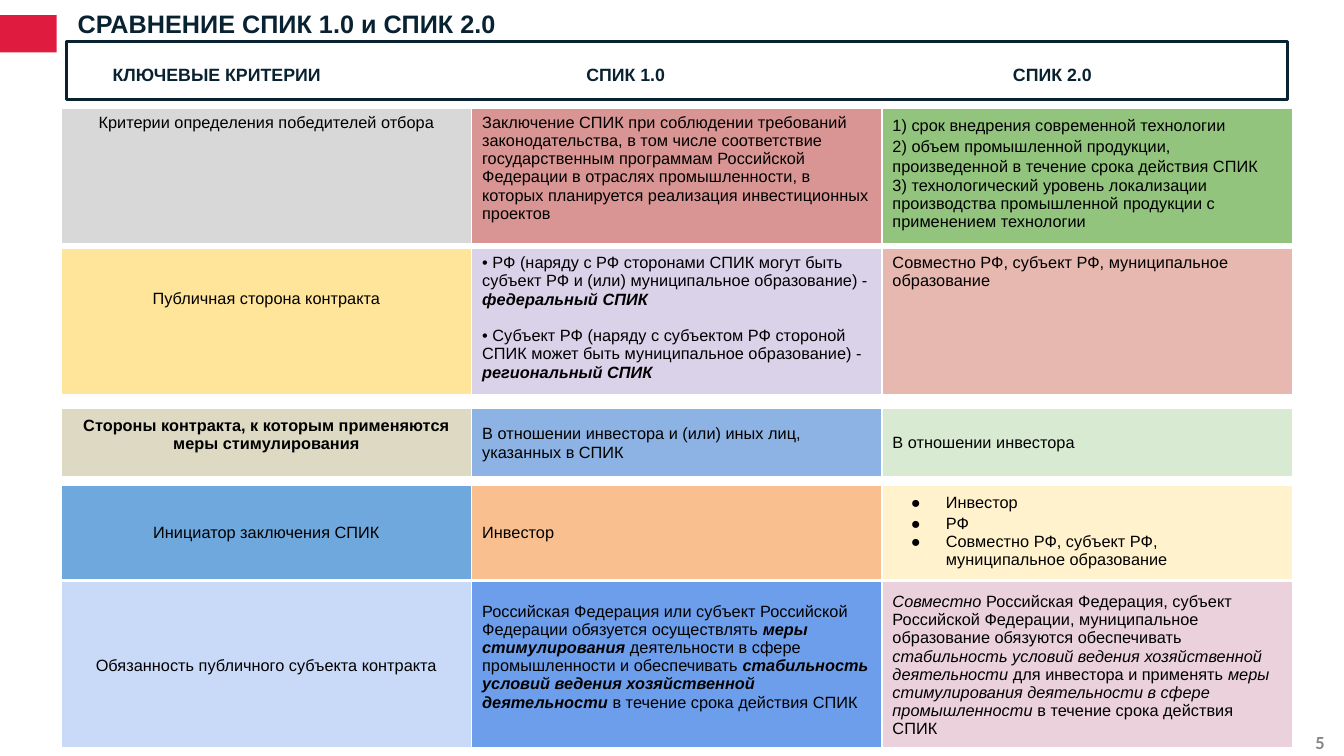
from lxml.etree import SubElement
from pptx import Presentation
from pptx.dml.color import RGBColor
from pptx.enum.shapes import MSO_SHAPE
from pptx.enum.text import MSO_ANCHOR, PP_ALIGN
from pptx.oxml.ns import qn
from pptx.util import Cm, Pt

NAVY, RED, GREY, BLACK, WHITE = "092231", "DF1C40", "888888", "000000", "FFFFFF"
TOP, MIDDLE = MSO_ANCHOR.TOP, MSO_ANCHOR.MIDDLE
TABLE_LEFT, COLUMN_WIDTH = 1.46, 9.77
TEXT_SIZE, CELL_INSET = 11, 0.13


def color(value):
    return RGBColor.from_string(value)


def para_of(*spans, **options):
    """Describe a paragraph; a span is plain text or a (text, style) pair of b and i."""
    return {"spans": spans, **options}


def cell_of(fill, *paras, anchor=TOP, top=CELL_INSET, bottom=CELL_INSET):
    return {"fill": fill, "paras": paras, "anchor": anchor, "top": top, "bottom": bottom}


def criterion(fill, text, style="", **options):
    return cell_of(fill, para_of((text, style), align=PP_ALIGN.CENTER), **options)


def item(text, spacing=None):
    return para_of(text, bullet=True, spacing=spacing)


# Each row: top, height, three cells
ROWS = [
    (2.58, 3.23, [
        criterion("D8D8D8", "Критерии определения победителей отбора"),
        cell_of("D99593", para_of(
            "Заключение СПИК при соблюдении требований законодательства, в том числе "
            "соответствие государственным программам Российской Федерации в отраслях "
            "промышленности, в которых планируется реализация инвестиционных проектов")),
        cell_of(
            "93C47D",
            para_of("1) срок внедрения современной технологии", spacing=1.15),
            para_of("2) объем промышленной продукции, произведенной в течение срока "
                    "действия СПИК", spacing=1.15),
            para_of("3) технологический уровень локализации производства промышленной "
                    "продукции с применением технологии")),
    ]),
    (5.92, 3.28, [
        criterion("FFE599", "Публичная сторона контракта", top=0.97),
        cell_of(
            "D9D2E9",
            para_of("• РФ (наряду с РФ сторонами СПИК могут быть субъект РФ и (или) "
                    "муниципальное образование) - ", ("федеральный СПИК", "bi"), after=12.5),
            para_of("• Субъект РФ (наряду с субъектом РФ стороной СПИК может быть "
                    "муниципальное образование) - ", ("региональный СПИК", "bi"))),
        cell_of("E6B8AF", para_of("Совместно РФ, субъект РФ, муниципальное образование")),
    ]),
    (9.73, 1.65, [
        criterion("DDD9C3", "Стороны контракта, к которым применяются меры стимулирования",
                  "b", anchor=MIDDLE, bottom=0.53),
        cell_of("8CB3E3", para_of("В отношении инвестора и (или) иных лиц, указанных в СПИК"),
                anchor=MIDDLE),
        cell_of("D9EAD3", para_of("В отношении инвестора"), anchor=MIDDLE),
    ]),
    (11.56, 2.1, [
        criterion("6FA8DC", "Инициатор заключения СПИК", anchor=MIDDLE),
        cell_of("FABF8E", para_of("Инвестор"), anchor=MIDDLE),
        cell_of("FFF2CC", item("Инвестор", 1.15), item("РФ", 1.15),
                item("Совместно РФ, субъект РФ, муниципальное образование")),
    ]),
    (13.85, 3.71, [
        criterion("C9DAF8", "Обязанность публичного субъекта контракта", anchor=MIDDLE),
        cell_of("6D9EEB", para_of(
            "Российская Федерация или субъект Российской Федерации обязуется осуществлять ",
            ("меры стимулирования ", "bi"),
            "деятельности в сфере промышленности и обеспечивать ",
            ("стабильность условий ведения хозяйственной деятельности", "bi"),
            " в течение срока действия СПИК"), anchor=MIDDLE, bottom=0.53),
        cell_of("EAD1DC", para_of(
            ("Совместно", "i"),
            " Российская Федерация, субъект Российской Федерации, муниципальное "
            "образование обязуются обеспечивать ",
            ("стабильность условий ведения хозяйственной деятельности", "i"),
            " для инвестора и применять ",
            ("меры стимулирования деятельности в сфере промышленности ", "i"),
            "в течение срока действия СПИК"), anchor=MIDDLE),
    ]),
]


def set_font(para, size, value, name="Arial", bold=None):
    font = para.font
    font.name, font.size, font.bold = name, Pt(size), bold
    font.color.rgb = color(value)


def set_insets(frame, left=0, top=0, right=0, bottom=0):
    frame.margin_left, frame.margin_top = Cm(left), Cm(top)
    frame.margin_right, frame.margin_bottom = Cm(right), Cm(bottom)


def add_label(page, box, text, size, value, name="Arial"):
    frame = page.shapes.add_textbox(*map(Cm, box)).text_frame
    frame.word_wrap = True
    set_insets(frame)
    para = frame.paragraphs[0]
    para.text = text
    set_font(para, size, value, name, bold=True)


def add_marker(page, box):
    marker = page.shapes.add_shape(MSO_SHAPE.RECTANGLE, *map(Cm, box))
    marker.shadow.inherit = False
    marker.fill.solid()
    marker.fill.fore_color.rgb = color(RED)
    marker.line.fill.background()


def add_header(page, box, titles, inset, tabs):
    header = page.shapes.add_shape(MSO_SHAPE.RECTANGLE, *map(Cm, box))
    header.shadow.inherit = False
    header.fill.background()
    header.line.color.rgb = color(NAVY)
    header.line.width = Pt(2.04)
    frame = header.text_frame
    frame.vertical_anchor = TOP
    set_insets(frame, left=inset, top=0.52)
    para = frame.paragraphs[0]
    para.text = "\t".join(titles)
    para.alignment = PP_ALIGN.LEFT
    tab_list = SubElement(para._p.get_or_add_pPr(), qn("a:tabLst"))
    for position in tabs:
        SubElement(tab_list, qn("a:tab"), pos=str(Cm(position)), algn="l")
    set_font(para, 12, NAVY, bold=True)


def set_bullet(para):
    properties = para._p.get_or_add_pPr()
    properties.set("marL", str(Cm(1.27)))
    properties.set("indent", str(Cm(-0.83)))
    SubElement(properties, qn("a:buFont"), typeface="Arial")
    SubElement(properties, qn("a:buChar"), char="●")


def set_borders(cell):
    properties = cell._tc.get_or_add_tcPr()
    for side, width in (("L", 1), ("R", 1), ("T", 1), ("B", 3)):
        line = SubElement(properties, qn(f"a:ln{side}"), w=str(Pt(width)))
        fill = SubElement(line, qn("a:solidFill"))
        SubElement(fill, qn("a:srgbClr"), val=WHITE)


def fill_para(para, content):
    if content.get("bullet"):
        set_bullet(para)
    para.alignment = content.get("align", PP_ALIGN.LEFT)
    if content.get("spacing"):
        para.line_spacing = content["spacing"]
    if content.get("after"):
        para.space_after = Pt(content["after"])
    set_font(para, TEXT_SIZE, BLACK)
    for part in content["spans"]:
        text, style = (part, "") if isinstance(part, str) else part
        span = para.add_run()
        span.text = text
        span.font.bold, span.font.italic = "b" in style, "i" in style


def fill_cell(cell, content):
    set_borders(cell)
    cell.fill.solid()
    cell.fill.fore_color.rgb = color(content["fill"])
    cell.vertical_anchor = content["anchor"]
    set_insets(cell, 0.25, content["top"], 0.25, content["bottom"])
    frame = cell.text_frame
    for index, para_content in enumerate(content["paras"]):
        para = frame.add_paragraph() if index else frame.paragraphs[0]
        fill_para(para, para_content)


def add_comparison_row(page, box, cells):
    """Place one criterion as a single-row table in the box."""
    table = page.shapes.add_table(1, len(cells), *map(Cm, box)).table
    table.first_row = table.horz_banding = False
    for cell, content in zip(table.rows[0].cells, cells):
        fill_cell(cell, content)


def main():
    deck = Presentation()
    deck.slide_width, deck.slide_height = Cm(32), Cm(18)
    page = deck.slides.add_slide(deck.slide_layouts[6])
    add_header(page, (1.58, 0.99, 29.08, 1.37),
               ("КЛЮЧЕВЫЕ КРИТЕРИИ", "СПИК 1.0", "СПИК 2.0"), 1.1, (11.28, 21.44))
    add_label(page, (1.85, 0.2, 12, 0.8), "СРАВНЕНИЕ СПИК 1.0 и СПИК 2.0", 17, NAVY)
    add_marker(page, (0, 0.36, 1.35, 0.89))
    add_label(page, (31.32, 17.4, 0.6, 0.5), "5", 12.5, GREY, "Calibri")
    for top, height, cells in ROWS:
        add_comparison_row(page, (TABLE_LEFT, top, COLUMN_WIDTH * len(cells), height), cells)
    deck.save("out.pptx")


if __name__ == "__main__":
    main()
